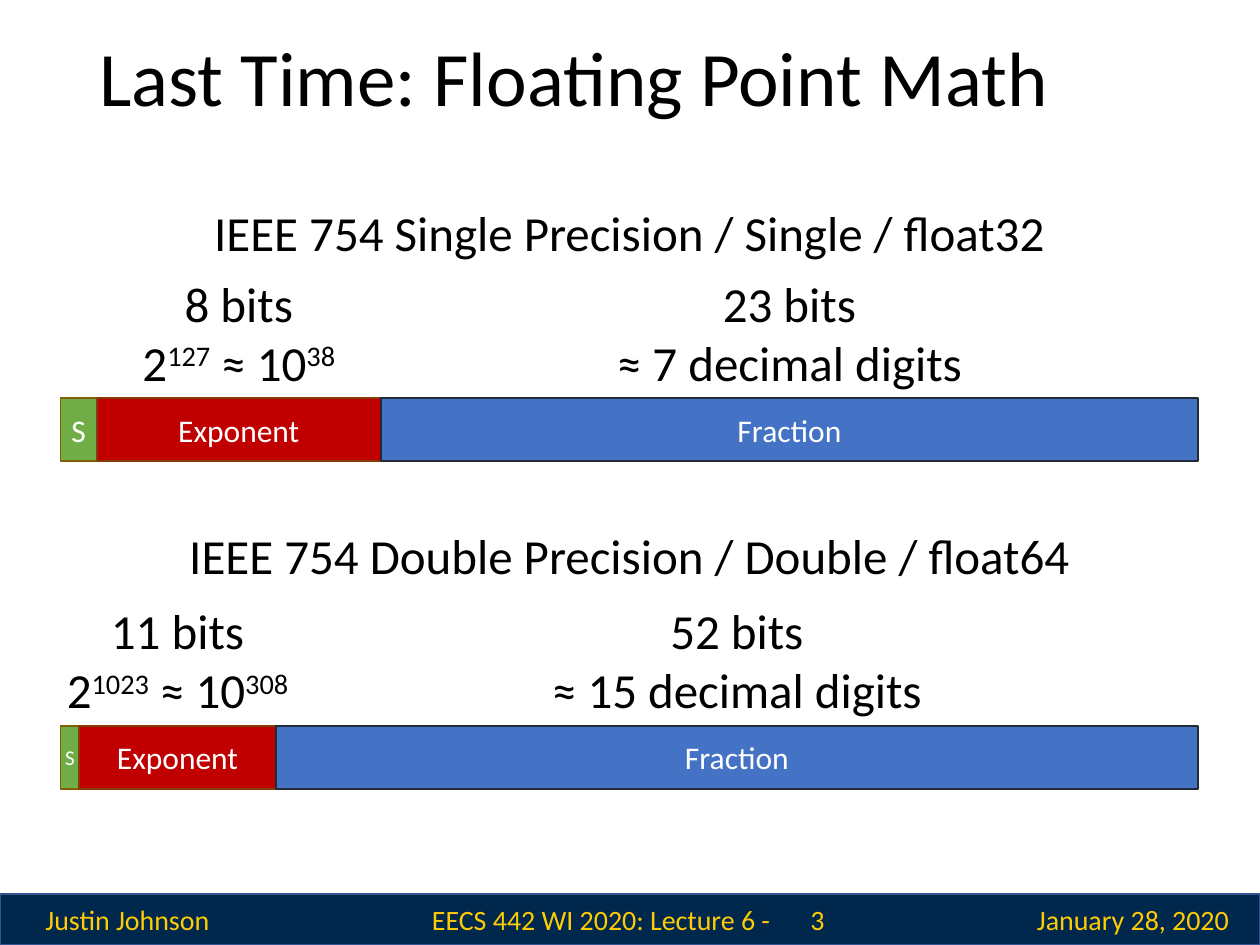
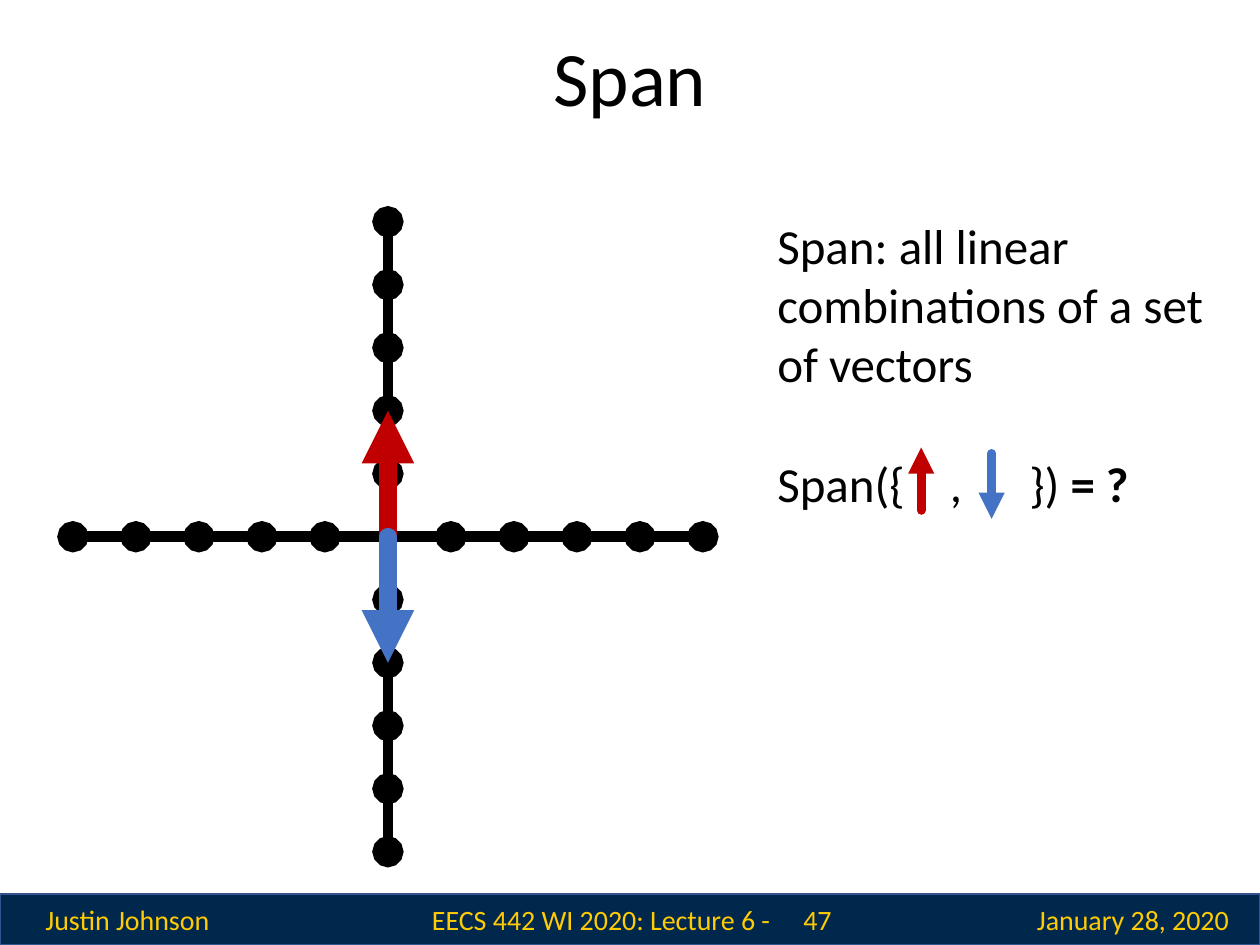
from lxml import etree
from pptx import Presentation
from pptx import util as u
from pptx.dml.color import RGBColor
from pptx.enum import shapes, text
from pptx.oxml import ns

COLORS = {
    "ink": "000000", "white": "FFFFFF",
    "navy": "00274C", "navy_edge": "325491", "maize": "FFCB05",
    "green": "70AD47", "green_edge": "806000",
    "red": "C00000", "red_edge": "843C0B",
    "blue": "4472C4", "blue_edge": "222A35",
}
FONT = "Calibri"
CENTER, LEFT = text.PP_ALIGN.CENTER, text.PP_ALIGN.LEFT
MIDDLE, TOP = text.MSO_ANCHOR.MIDDLE, text.MSO_ANCHOR.TOP
SLIDE_WIDTH, SLIDE_HEIGHT = 25.4, 19.05
BAND_TOP, BAND_HEIGHT = 18.03, 1.02
BAR_LEFT, BAR_RIGHT, BAR_HEIGHT = 1.22, 24.15, 1.27
LABEL_HEIGHT, LABEL_MIN_WIDTH = 2.64, 6.07
ORIGIN, TICK_GAP, TICKS = (7.82, 10.82), 1.27, 5


def rgb(name):
    return RGBColor.from_string(COLORS[name])


def set_format(target, **values):
    for attribute, value in values.items():
        setattr(target, attribute, value)


def add_drawing_child(parent, tag, **attributes):
    child = etree.SubElement(parent, ns.qn(f"a:{tag}"))
    for key, value in attributes.items():
        child.set(key, value)
    return child


def write(frame, lines, size, color="ink", align=CENTER, anchor=TOP,
          accent="superscript", spacing=1.0, tabs=()):
    """Fill a text frame; the pieces between | marks get the accent."""
    set_format(frame, word_wrap=True, vertical_anchor=anchor)
    for index, line in enumerate(lines):
        paragraph = frame.add_paragraph() if index else frame.paragraphs[0]
        set_format(paragraph, alignment=align, line_spacing=spacing)
        if tabs:
            tab_list = add_drawing_child(paragraph._p.get_or_add_pPr(), "tabLst")
            for stop in tabs:
                add_drawing_child(tab_list, "tab", pos=str(u.Cm(stop)), algn="l")
        for piece_number, piece in enumerate(line.split("|")):
            if not piece:
                continue
            run = paragraph.add_run()
            run.text = piece
            set_format(run.font, name=FONT, size=u.Pt(size))
            run.font.color.rgb = rgb(color)
            if piece_number % 2 and accent == "superscript":
                run._r.get_or_add_rPr().set("baseline", "30000")
            elif piece_number % 2:
                run.font.bold = True


def add_text(slide, left, top, width, height, lines, size, **style):
    box = slide.shapes.add_textbox(*map(u.Cm, (left, top, width, height)))
    write(box.text_frame, lines, size, **style)


def add_block(slide, left, top, width, height, color, label="", size=18):
    block = slide.shapes.add_shape(
        shapes.MSO_SHAPE.RECTANGLE, *map(u.Cm, (left, top, width, height)))
    block.shadow.inherit = False
    block.fill.solid()
    block.fill.fore_color.rgb = rgb(color)
    block.line.color.rgb = rgb(f"{color}_edge")
    block.line.width = u.Pt(1)
    if label:
        set_format(block.text_frame, margin_left=0, margin_right=0)
        write(block.text_frame, [label], size, color="white", anchor=MIDDLE)


def add_line(slide, start, end, color, weight, tip):
    line = slide.shapes.add_connector(
        shapes.MSO_CONNECTOR.STRAIGHT, *map(u.Cm, (*start, *end)))
    line.line.color.rgb = rgb(color)
    line.line.width = u.Pt(weight)
    outline = line.line._get_or_add_ln()
    outline.set("cap", "rnd")
    add_drawing_child(outline, "tailEnd", type=tip)
    add_drawing_child(line._element.spPr, "effectLst")


def add_lecture_slide(deck, title, number, align=CENTER):
    """Add a blank slide with the shared title and footer band."""
    slide = deck.slides.add_slide(deck.slide_layouts[6])
    add_block(slide, 0, BAND_TOP, SLIDE_WIDTH, BAND_HEIGHT, "navy")
    footers = [
        (0.03, 5.08, "Justin Johnson"),
        (8.32, 7.6, "EECS 442 WI 2020: Lecture 6 -"),
        (15.36, 2.24, str(number)),
        (20.3, 5.08, "January 28, 2020"),
    ]
    for left, width, label in footers:
        add_text(slide, left, BAND_TOP, width, BAND_HEIGHT, [label], 16,
                 color="maize", anchor=MIDDLE)
    add_text(slide, 1.75, 0.5, 21.9, 2.29, [title], 44,
             align=align, anchor=MIDDLE, spacing=0.9)
    return slide


def add_float_layout(slide, heading, heading_top, bar_top, splits, sign_size,
                     exponent_lines, fraction_lines):
    """Draw a number format as sign, exponent and fraction fields."""
    add_text(slide, BAR_LEFT, heading_top, BAR_RIGHT - BAR_LEFT, 1.45,
             [heading], 28)
    edges = (BAR_LEFT, *splits, BAR_RIGHT)
    fields = [
        ("S", "green", sign_size, None),
        ("Exponent", "red", 18, exponent_lines),
        ("Fraction", "blue", 18, fraction_lines),
    ]
    for left, right, (name, color, size, lines) in zip(edges, edges[1:], fields):
        width = right - left
        add_block(slide, left, bar_top, width, BAR_HEIGHT, color, name, size)
        if lines:
            label_width = max(width, LABEL_MIN_WIDTH)
            add_text(slide, (left + right - label_width) / 2,
                     bar_top - LABEL_HEIGHT, label_width, LABEL_HEIGHT, lines, 28)


def from_origin(right, down):
    """Return the point that many ticks away from the origin."""
    return ORIGIN[0] + right * TICK_GAP, ORIGIN[1] + down * TICK_GAP


def add_axes(slide):
    for right, down in ((-1, 0), (1, 0), (0, -1), (0, 1)):
        for tick in range(1, TICKS + 1):
            add_line(slide, ORIGIN, from_origin(right * tick, down * tick),
                     "ink", 6, "oval")


def build_floating_point(deck):
    slide = add_lecture_slide(deck, "Last Time: Floating Point Math", 3, LEFT)
    add_float_layout(
        slide, "IEEE 754 Single Precision / Single / float32", 3.96, 8.03,
        (1.95, 7.68), 18,
        ["8 bits", "2|127| ≈ 10|38|"], ["23 bits", "≈ 7 decimal digits"])
    add_float_layout(
        slide, "IEEE 754 Double Precision / Double / float64", 10.46, 14.63,
        (1.6, 5.56), 12,
        ["11 bits", "2|1023| ≈ 10|308|"], ["52 bits", "≈ 15 decimal digits"])


def build_span(deck):
    slide = add_lecture_slide(deck, "Span", 47)
    add_axes(slide)
    add_line(slide, ORIGIN, from_origin(0, -2), "red", 10, "triangle")
    add_line(slide, ORIGIN, from_origin(0, 2), "blue", 10, "triangle")
    add_text(slide, 15.42, 4.22, 9.5, 3.84,
             ["Span: all linear combinations of a set of vectors"], 28, align=LEFT)
    add_text(slide, 15.42, 9.02, 9.95, 1.45, ["Span({\t,\t}) |= ?|"], 28,
             align=LEFT, accent="bold", tabs=(3.48, 5.08))
    add_line(slide, (18.57, 10.29), (18.57, 9.02), "red", 5, "triangle")
    add_line(slide, (19.99, 9.14), (19.99, 10.46), "blue", 5, "triangle")


def main():
    deck = Presentation()
    set_format(deck, slide_width=u.Cm(SLIDE_WIDTH), slide_height=u.Cm(SLIDE_HEIGHT))
    build_floating_point(deck)
    build_span(deck)
    deck.save("out.pptx")


if __name__ == "__main__":
    main()
